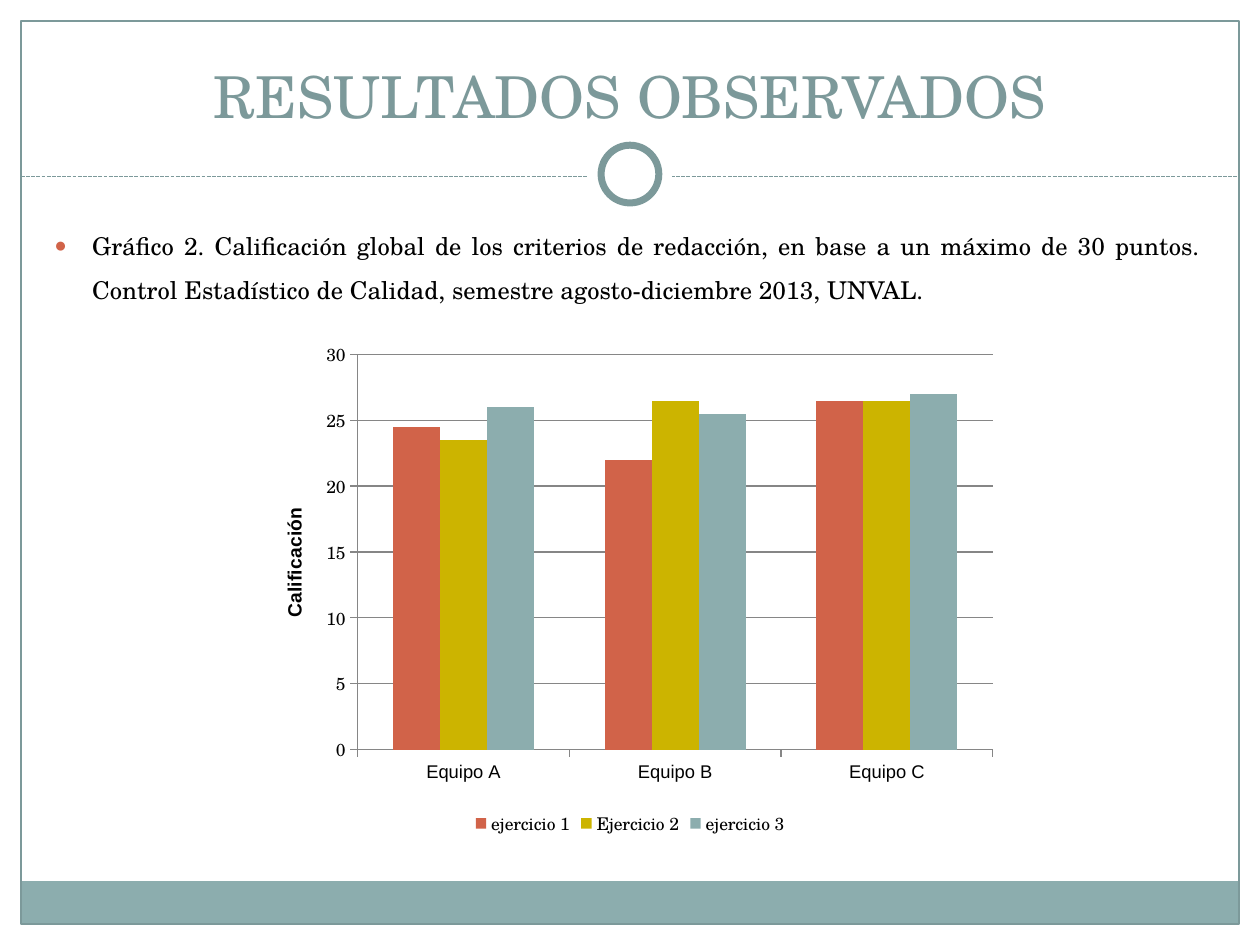
from lxml.etree import SubElement
from pptx import Presentation
from pptx.chart.data import CategoryChartData
from pptx.dml.color import RGBColor
from pptx.enum.chart import XL_CHART_TYPE, XL_LEGEND_POSITION, XL_TICK_MARK
from pptx.enum.dml import MSO_LINE
from pptx.enum.shapes import MSO_CONNECTOR, MSO_SHAPE
from pptx.enum.text import MSO_ANCHOR, PP_ALIGN
from pptx.oxml import parse_xml
from pptx.oxml.ns import nsdecls, qn
from pptx.util import Pt

SERIF = "TeX Gyre Schola"
SANS = "Arial"
TEAL, PALE_TEAL, RED, GOLD = "7C999A", "8CADAE", "D16349", "CCB400"
WHITE, BLACK, GRAY = "FFFFFF", "000000", "868686"
WIDTH, HEIGHT, MARGIN = 720, 540, 12
RULE_Y = 101


def color(value):
    return RGBColor.from_string(value)


def set_values(target, values):
    for name, value in values.items():
        setattr(target, name, value)


def set_font(font, name, size, fill=BLACK, bold=False):
    set_values(font, {"name": name, "size": Pt(size), "bold": bold})
    font.color.rgb = color(fill)


def set_line(line, fill, width):
    line.color.rgb = color(fill)
    line.width = Pt(width)


def add_panel(slide, kind, box, fill=None, line=None, width=0.75):
    shape = slide.shapes.add_shape(kind, *map(Pt, box))
    shape.shadow.inherit = False
    if fill:
        shape.fill.solid()
        shape.fill.fore_color.rgb = color(fill)
    else:
        shape.fill.background()
    if line:
        set_line(shape.line, line, width)
    else:
        shape.line.fill.background()


def add_ring(slide, center_y, diameter, **style):
    box = ((WIDTH - diameter) / 2, center_y - diameter / 2, diameter, diameter)
    add_panel(slide, MSO_SHAPE.OVAL, box, WHITE, **style)


def add_dashed_rule(slide, y):
    rule = slide.shapes.add_connector(
        MSO_CONNECTOR.STRAIGHT, Pt(MARGIN), Pt(y), Pt(WIDTH - MARGIN), Pt(y))
    set_line(rule.line, TEAL, 0.75)
    rule.line.dash_style = MSO_LINE.SQUARE_DOT
    SubElement(rule.element.spPr, qn("a:effectLst"))


def add_text(slide, box, text, size, fill, anchor, paragraph_format):
    frame = slide.shapes.add_textbox(*map(Pt, box)).text_frame
    set_values(frame, {"word_wrap": True, "vertical_anchor": anchor})
    paragraph = frame.paragraphs[0]
    set_values(paragraph, paragraph_format)
    run = paragraph.add_run()
    run.text = text
    set_font(run.font, SERIF, size, fill)
    return paragraph


def add_bullet(paragraph, indent):
    properties = paragraph._p.get_or_add_pPr()
    properties.set("marL", str(Pt(indent)))
    properties.set("indent", str(Pt(-indent)))
    bullet_color = SubElement(properties, qn("a:buClr"))
    SubElement(bullet_color, qn("a:srgbClr"), val=RED)
    SubElement(properties, qn("a:buSzPct"), val="85000")
    SubElement(properties, qn("a:buFont"), typeface=SANS)
    SubElement(properties, qn("a:buChar"), char="●")


def set_plot_layout(chart, **fractions):
    plot_area = chart._chartSpace.chart.plotArea
    for layout in plot_area.findall(qn("c:layout")):
        plot_area.remove(layout)
    sizes = "".join(f'<c:{key} val="{value}"/>' for key, value in fractions.items())
    plot_area.insert(0, parse_xml(
        f'<c:layout {nsdecls("c")}><c:manualLayout><c:layoutTarget val="inner"/>'
        f'<c:xMode val="edge"/><c:yMode val="edge"/>{sizes}'
        '</c:manualLayout></c:layout>'))


def format_axis(axis, font_name, size):
    set_values(axis, {"major_tick_mark": XL_TICK_MARK.OUTSIDE,
                      "minor_tick_mark": XL_TICK_MARK.NONE})
    set_font(axis.tick_labels.font, font_name, size)
    set_line(axis.format.line, GRAY, 0.75)


def add_score_chart(slide, box, categories, series):
    data = CategoryChartData()
    data.categories = categories
    for name, values, _ in series:
        data.add_series(name, values)
    chart = slide.shapes.add_chart(
        XL_CHART_TYPE.COLUMN_CLUSTERED, *map(Pt, box), data).chart
    set_font(chart.font, SERIF, 10)
    set_values(chart, {"has_title": False, "has_legend": True})
    set_values(chart.legend, {"position": XL_LEGEND_POSITION.BOTTOM,
                              "include_in_layout": False})
    set_font(chart.legend.font, SERIF, 10)

    plot = chart.plots[0]
    set_values(plot, {"gap_width": 150, "overlap": 0, "vary_by_categories": False})
    for bar, (_, _, fill) in zip(plot.series, series):
        bar.format.fill.solid()
        bar.format.fill.fore_color.rgb = color(fill)

    format_axis(chart.category_axis, SANS, 10.5)
    scores = chart.value_axis
    format_axis(scores, SERIF, 10)
    set_values(scores, {"minimum_scale": 0, "maximum_scale": 30, "major_unit": 5,
                        "has_major_gridlines": True})
    set_line(scores.major_gridlines.format.line, GRAY, 0.75)
    title = scores.axis_title.text_frame
    title.text = "Calificación"
    set_font(title.paragraphs[0].runs[0].font, SANS, 11, bold=True)
    set_plot_layout(chart, x=0.14, y=0.04, w=0.84, h=0.78)


def add_frame(slide):
    inner_width, inner_height = WIDTH - 2 * MARGIN, HEIGHT - 2 * MARGIN
    for box, fill in (
        ((0, 0, WIDTH, 109), WHITE),
        ((0, 0, MARGIN, HEIGHT), WHITE),
        ((WIDTH - MARGIN, 0, MARGIN, HEIGHT), WHITE),
        ((MARGIN, 503.5, inner_width, 24.5), PALE_TEAL),
    ):
        add_panel(slide, MSO_SHAPE.RECTANGLE, box, fill)
    add_panel(slide, MSO_SHAPE.RECTANGLE,
              (MARGIN, MARGIN, inner_width, inner_height), line=TEAL)
    add_dashed_rule(slide, RULE_Y)
    add_ring(slide, 99.5, 48)
    add_ring(slide, 99.5, 33, line=TEAL, width=4)


def main():
    presentation = Presentation()
    set_values(presentation, {"slide_width": Pt(WIDTH), "slide_height": Pt(HEIGHT)})
    slide = presentation.slides.add_slide(presentation.slide_layouts[6])
    add_frame(slide)
    add_text(slide, (24, 18, 672, 60), "RESULTADOS OBSERVADOS", 33, TEAL,
             MSO_ANCHOR.BOTTOM, {"alignment": PP_ALIGN.CENTER})
    caption = add_text(
        slide, (24, 120, 669.5, 360),
        "Gráfico 2. Calificación global de los criterios de redacción, en base a un "
        "máximo de 30 puntos. Control Estadístico de Calidad, semestre "
        "agosto-diciembre 2013, UNVAL.",
        14, BLACK, MSO_ANCHOR.TOP,
        {"alignment": PP_ALIGN.JUSTIFY, "line_spacing": 1.5, "space_before": Pt(2.8)})
    add_bullet(caption, 21.6)
    add_score_chart(
        slide, (144, 191, 432, 289.5), ("Equipo A", "Equipo B", "Equipo C"),
        (("ejercicio 1", (24.5, 22, 26.5), RED),
         ("Ejercicio 2", (23.5, 26.5, 26.5), GOLD),
         ("ejercicio 3", (26, 25.5, 27), PALE_TEAL)))
    presentation.save("out.pptx")


if __name__ == "__main__":
    main()
